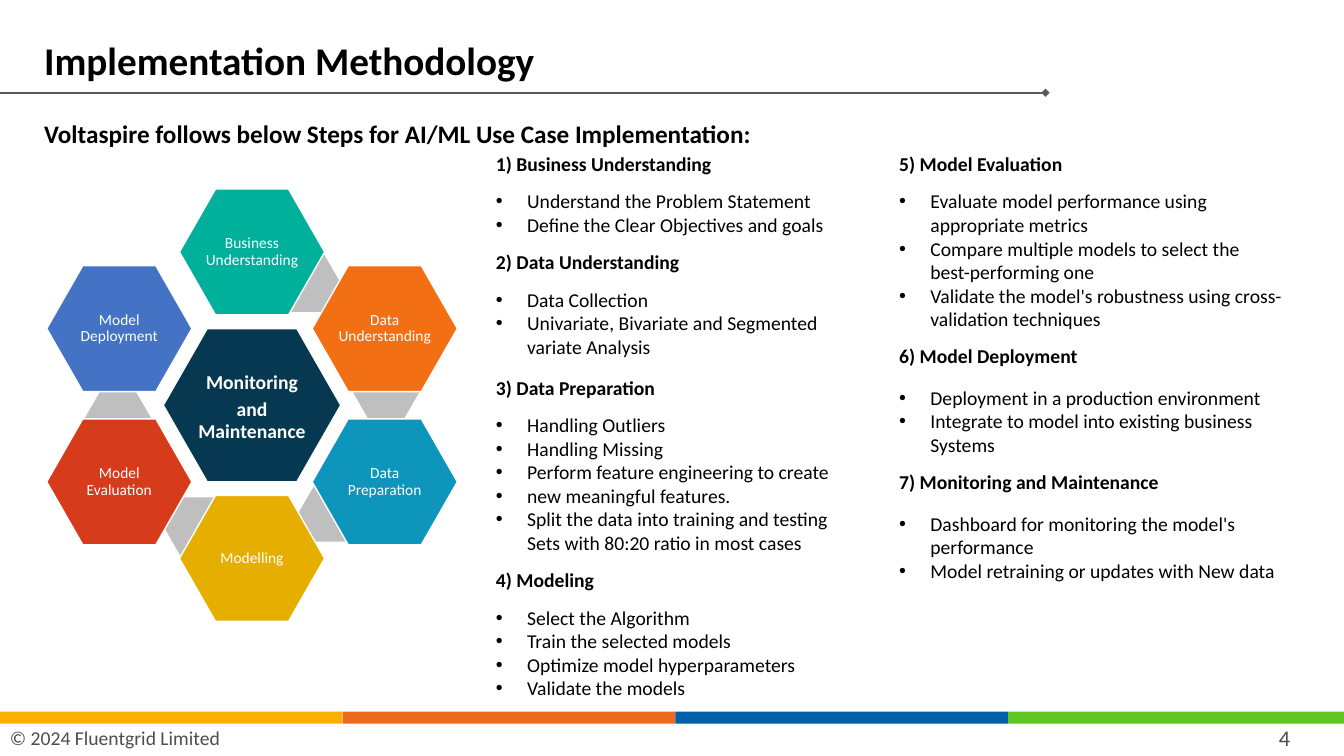
"""Build the Implementation Methodology slide."""
from math import cos, radians, sin

from lxml import etree
from pptx import Presentation
from pptx.dml.color import RGBColor
from pptx.enum.shapes import MSO_CONNECTOR, MSO_SHAPE as SHAPE
from pptx.enum.text import MSO_ANCHOR as ANCHOR, PP_ALIGN as ALIGN
from pptx.oxml.ns import qn
from pptx.util import Inches, Pt

BLACK = RGBColor(0x00, 0x00, 0x00)
WHITE = RGBColor(0xFF, 0xFF, 0xFF)
GREY = RGBColor(0x4D, 0x4D, 0x4D)
RULE = RGBColor(0x5A, 0x5A, 0x5A)
LINK = RGBColor(0xBF, 0xBF, 0xBF)
NAVY = RGBColor(0x06, 0x39, 0x51)

TITLE = "Implementation Methodology"
SUBTITLE = "Voltaspire follows below Steps for AI/ML Use Case Implementation:"
COPYRIGHT = "© 2024 Fluentgrid Limited"
PAGE = "4"

SMALL_GAP, LARGE_GAP = 9.8, 12.8
COLUMNS = [
    (4.82, 3.99, 5.65, [
        ("1) Business Understanding", 0, SMALL_GAP, [
            "Understand the Problem Statement",
            "Define the Clear Objectives and goals"]),
        ("2) Data Understanding", SMALL_GAP, SMALL_GAP, [
            "Data Collection",
            "Univariate, Bivariate and Segmented\nvariate Analysis"]),
        ("3) Data Preparation", LARGE_GAP, SMALL_GAP, [
            "Handling Outliers",
            "Handling Missing",
            "Perform feature engineering to create",
            "new meaningful features.",
            "Split the data into training and testing\n"
            "Sets with 80:20 ratio in most cases"]),
        ("4) Modeling", SMALL_GAP, SMALL_GAP, [
            "Select the Algorithm",
            "Train the selected models",
            "Optimize model hyperparameters",
            "Validate the models"]),
    ]),
    (8.82, 4, 4.51, [
        ("5) Model Evaluation", 0, SMALL_GAP, [
            "Evaluate model performance using appropriate metrics",
            "Compare multiple models to select the best-performing one",
            "Validate the model's robustness using cross-validation techniques"]),
        ("6) Model Deployment", SMALL_GAP, LARGE_GAP, [
            "Deployment in a production environment",
            "Integrate to model into existing business Systems"]),
        ("7) Monitoring and Maintenance", SMALL_GAP, LARGE_GAP, [
            "Dashboard for monitoring the model's performance",
            "Model retraining or updates with New data"]),
    ]),
]

RING = [
    ("Business Understanding", RGBColor(0x00, 0xB0, 0x9B)),
    ("Data Understanding", RGBColor(0xF3, 0x6F, 0x13)),
    ("Data Preparation", RGBColor(0x0D, 0x95, 0xBC)),
    ("Modelling", RGBColor(0xE6, 0xAF, 0x00)),
    ("Model Evaluation", RGBColor(0xD6, 0x3B, 0x1C)),
    ("Model Deployment", RGBColor(0x44, 0x72, 0xC4)),
]
HUB_RUNS = [("Monitoring", 14), (" ", 18), ("and", 14), (" ", 18), ("Maintenance", 14)]
HUB_X, HUB_Y, RADIUS = 2.5, 4.02, 1.52
LINKS = [(3.05, 2.81), (3.83, 3.89), (3.29, 5.09), (1.95, 5.22), (1.17, 4.15)]

BAND = [
    (3.4, RGBColor(0xF9, 0xB1, 0x01)),
    (3.3, RGBColor(0xEC, 0x69, 0x1F)),
    (3.3, RGBColor(0x00, 0x60, 0xAA)),
    (3.34, RGBColor(0x60, 0xC4, 0x21)),
]

prs = Presentation()
prs.slide_width, prs.slide_height = Inches(13.33), Inches(7.5)
s = prs.slides.add_slide(prs.slide_layouts[6])


def add_run(p, text, size, color=BLACK, bold=False):
    r = p.add_run()
    r.text = text
    r.font.color.rgb = color
    for name, value in {"name": "Calibri", "size": Pt(size), "bold": bold}.items():
        setattr(r.font, name, value)


def add_box(x, y, w, h, anchor=ANCHOR.TOP):
    tf = s.shapes.add_textbox(*map(Inches, (x, y, w, h))).text_frame
    tf.word_wrap = True
    tf.vertical_anchor = anchor
    return tf


def add_line(x, y, w, h, text, size, color=BLACK, bold=False, anchor=ANCHOR.MIDDLE, **fmt):
    p = add_box(x, y, w, h, anchor).paragraphs[0]
    for name, value in fmt.items():
        setattr(p, name, value)
    add_run(p, text, size, color, bold)


def add_shape(kind, x, y, w, h, fill, outlined=False):
    sp = s.shapes.add_shape(kind, *map(Inches, (x, y, w, h)))
    sp.shadow.inherit = False
    sp.fill.solid()
    sp.fill.fore_color.rgb = fill
    if outlined:
        sp.line.color.rgb = WHITE
        sp.line.width = Pt(1)
    else:
        sp.line.fill.background()
    return sp


def add_hexagon(cx, cy, w, h, fill, runs=(), bold=False):
    sp = add_shape(SHAPE.HEXAGON, cx - w / 2, cy - h / 2, w, h, fill, bool(runs))
    sp.adjustments[0] = 0.286 if runs else 0.289
    tf = sp.text_frame
    tf.word_wrap = True
    tf.vertical_anchor = ANCHOR.MIDDLE
    for side in ("left", "right", "top", "bottom"):
        setattr(tf, f"margin_{side}", Inches(0.02))
    p = tf.paragraphs[0]
    p.alignment, p.line_spacing = ALIGN.CENTER, 0.9
    for text, size in runs:
        add_run(p, text, size, WHITE, bold)


def add_sections(tf, sections):
    p = tf.paragraphs[0]
    for i, (heading, before, after, items) in enumerate(sections):
        if i:
            p = tf.add_paragraph()
            p.space_before = Pt(before)
        p.space_after = Pt(after)
        add_run(p, heading, 14, bold=True)
        for item in items:
            for n, text in enumerate(item.split("\n")):
                p = tf.add_paragraph()
                pPr = p._p.get_or_add_pPr()
                pPr.set("marL", str(Inches(0.31)))
                if n == 0:
                    pPr.set("indent", str(-Inches(0.31)))
                    etree.SubElement(pPr, qn("a:buFont"), typeface="Arial")
                    etree.SubElement(pPr, qn("a:buChar"), char="•")
                add_run(p, text, 14)


x = 0
for width, color in BAND:
    add_shape(SHAPE.RECTANGLE, x, 7.06, width, 0.12, color)
    x += width
add_line(0, 7.14, 3.4, 0.36, COPYRIGHT, 14, GREY)
add_line(12.14, 7.14, 1.2, 0.36, PAGE, 16, GREY, alignment=ALIGN.CENTER)

rule = s.shapes.add_connector(MSO_CONNECTOR.STRAIGHT, *map(Inches, (0, 0.92, 10.37, 0.92)))
rule.line.color.rgb = RULE
rule.line.width = Pt(1.5)
etree.SubElement(rule.line._get_or_add_ln(), qn("a:tailEnd"), type="diamond")
etree.SubElement(rule._element.spPr, qn("a:effectLst"))

add_line(0.34, 0.31, 9.5, 0.62, TITLE, 28, bold=True, line_spacing=0.9)
add_line(0.34, 1.1, 8.68, 0.41, SUBTITLE, 18, bold=True, anchor=ANCHOR.TOP,
         alignment=ALIGN.JUSTIFY, line_spacing=1.07)
for left, width, height, sections in COLUMNS:
    add_sections(add_box(left, 1.46, width, height), sections)

add_hexagon(HUB_X, HUB_Y, 1.76, 1.52, NAVY, HUB_RUNS, bold=True)
for cx, cy in LINKS:
    add_hexagon(cx, cy, 0.66, 0.57, LINK)
for i, (label, color) in enumerate(RING):
    angle = radians(60 * i)
    add_hexagon(HUB_X + RADIUS * sin(angle), HUB_Y - RADIUS * cos(angle),
                1.44, 1.25, color, [(label, 11)])

prs.save("out.pptx")
